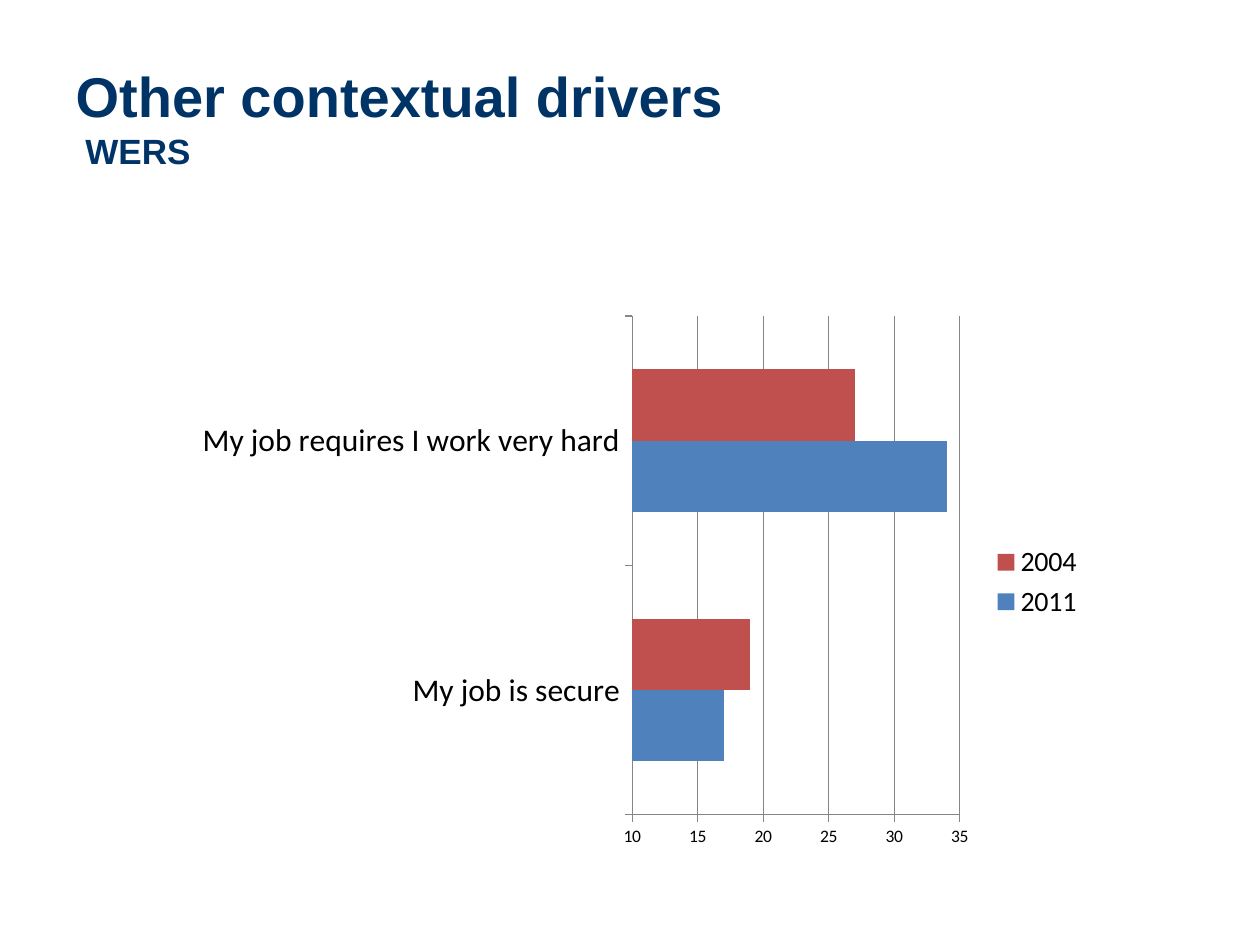
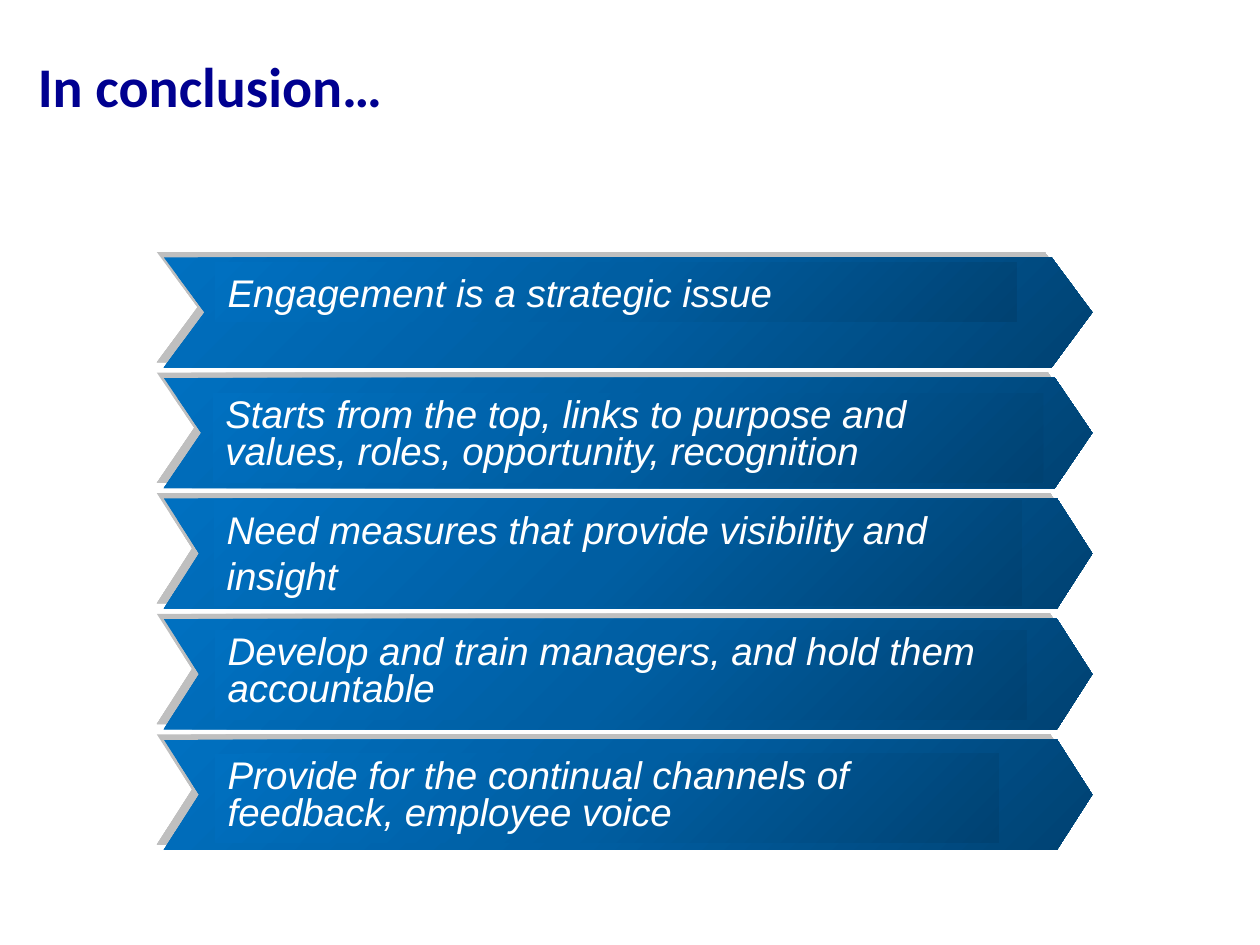
from dataclasses import dataclass
from typing import Any

from pptx import Presentation
from pptx import util as u
from pptx.chart.data import CategoryChartData
from pptx.dml.color import RGBColor
from pptx.enum import chart as ec, shapes, text
from pptx.oxml import parse_xml
from pptx.oxml.ns import nsdecls

Pt = u.Pt
NAVY, INDIGO, WHITE, BLACK, GRAY = "003366", "000090", "FFFFFF", "000000", "868686"
BLUE, RED = "4F81BD", "C0504D"
GRADIENT = ((0, "004272"), (50, "005EA2"), (100, "0070C0"))
CHEVRON_LEFT, CHEVRON_TOP, CHEVRON_W, CHEVRON_H, CHEVRON_STEP = 93.6, 147, 530.6, 63, 68.9


@dataclass
class Title:
    lines: list[tuple[str, float]]
    left: float
    top: float
    font: str
    color: str


@dataclass
class Conclusion:
    words: str
    notch: float
    left: float
    top: float
    width: float
    height: float
    spacing: float


CONCLUSIONS = [
    Conclusion("Engagement is a strategic issue", 0.37, 123, 150, 458, 33.8, 1),
    Conclusion("Starts from the top, links to purpose and values, roles, opportunity, recognition",
               0.34, 121.7, 224.6, 474.5, 51, 0.8),
    Conclusion("Need measures that provide visibility and insight",
               0.32, 122.4, 285.8, 461.5, 60.5, 1),
    Conclusion("Develop and train managers, and hold them accountable",
               0.32, 123, 360, 463.7, 51, 0.8),
    Conclusion("Provide for the continual channels of feedback, employee voice",
               0.32, 123, 430.6, 447.8, 51, 0.8),
]


def rgb(color: str) -> RGBColor:
    return RGBColor.from_string(color)


def apply(target: Any, values: dict[str, Any]) -> None:
    for name, value in values.items():
        setattr(target, name, value)


def style_font(font: Any, size: float, name: str, color: str, **extra: bool) -> None:
    apply(font, {"size": Pt(size), "name": name, **extra})
    font.color.rgb = rgb(color)


def set_title(s: Any, title: Title) -> None:
    sp = s.shapes.title
    apply(sp, {"left": Pt(title.left), "top": Pt(title.top),
               "width": Pt(648), "height": Pt(90)})
    tf = sp.text_frame
    apply(tf, {"word_wrap": True, "auto_size": text.MSO_AUTO_SIZE.NONE,
               "vertical_anchor": text.MSO_ANCHOR.MIDDLE})
    p = tf.paragraphs[0]
    p.alignment = text.PP_ALIGN.LEFT
    for i, (words, size) in enumerate(title.lines):
        if i:
            p.add_line_break()
        r = p.add_run()
        r.text = words
        style_font(r.font, size, title.font, title.color, bold=True)


def gradient_shape(s: Any, kind: Any, left: float, top: float,
                   width: float, height: float) -> Any:
    sp = s.shapes.add_shape(kind, Pt(left), Pt(top), Pt(width), Pt(height))
    stops = "".join(f'<a:gs pos="{pos * 1000}"><a:srgbClr val="{color}"/></a:gs>'
                    for pos, color in GRADIENT)
    sp._element.spPr.append(parse_xml(
        f'<a:gradFill {nsdecls("a")} rotWithShape="1"><a:gsLst>{stops}</a:gsLst>'
        '<a:path path="circle"><a:fillToRect l="100000" t="100000"/></a:path></a:gradFill>'))
    sp.line.fill.background()
    sp.shadow.inherit = False
    return sp


def add_shadow(sp: Any) -> None:
    sp._element.spPr[-1].append(parse_xml(
        f'<a:outerShdw {nsdecls("a")} dist="{Pt(5)}" dir="{217 * 60000}" rotWithShape="0">'
        '<a:srgbClr val="808080"><a:alpha val="50000"/></a:srgbClr></a:outerShdw>'))


def add_chevron(s: Any, index: int, notch: float) -> None:
    sp = gradient_shape(s, shapes.MSO_SHAPE.CHEVRON, CHEVRON_LEFT,
                        CHEVRON_TOP + index * CHEVRON_STEP, CHEVRON_W, CHEVRON_H)
    sp.adjustments[0] = notch
    add_shadow(sp)


def add_statement(s: Any, item: Conclusion) -> None:
    sp = gradient_shape(s, shapes.MSO_SHAPE.RECTANGLE,
                        item.left, item.top, item.width, item.height)
    tf = sp.text_frame
    apply(tf, {"word_wrap": True, "vertical_anchor": text.MSO_ANCHOR.TOP})
    p = tf.paragraphs[0]
    apply(p, {"alignment": text.PP_ALIGN.LEFT, "line_spacing": item.spacing})
    r = p.add_run()
    r.text = item.words
    style_font(r.font, 22, "Arial", WHITE, italic=True)


def add_survey_chart(s: Any) -> None:
    data = CategoryChartData()
    data.categories = ["My job is secure", "My job requires I work very hard"]
    data.add_series("2011", (17, 34))
    data.add_series("2004", (19, 27))
    chart = s.shapes.add_chart(ec.XL_CHART_TYPE.BAR_CLUSTERED, Pt(106.6), Pt(174.2),
                               Pt(519.8), Pt(316.8), data).chart
    apply(chart, {"has_title": False, "has_legend": True})
    style_font(chart.font, 10, "Calibri", BLACK)
    apply(chart.legend, {"position": ec.XL_LEGEND_POSITION.RIGHT, "include_in_layout": False})
    style_font(chart.legend.font, 16, "Calibri", BLACK)
    plot = chart.plots[0]
    apply(plot, {"gap_width": 150, "overlap": 0, "vary_by_categories": False})
    for series, color in zip(plot.series, (BLUE, RED)):
        series.format.fill.solid()
        series.format.fill.fore_color.rgb = rgb(color)
    apply(chart.value_axis, {"minimum_scale": 10, "maximum_scale": 35, "major_unit": 5,
                             "has_major_gridlines": True})
    lines = [chart.value_axis.major_gridlines.format.line]
    for axis, size in ((chart.category_axis, 18), (chart.value_axis, 10)):
        axis.major_tick_mark = ec.XL_TICK_MARK.OUTSIDE
        style_font(axis.tick_labels.font, size, "Calibri", BLACK)
        lines.append(axis.format.line)
    for line in lines:
        line.color.rgb = rgb(GRAY)
        line.width = Pt(0.75)
    area = chart._chartSpace.chart.plotArea
    for old in area.xpath("c:layout"):
        area.remove(old)
    bounds = {"x": 0.49, "y": 0.02, "w": 0.36, "h": 0.9}
    area.insert(0, parse_xml(
        f'<c:layout {nsdecls("c")}><c:manualLayout><c:layoutTarget val="inner"/>'
        '<c:xMode val="edge"/><c:yMode val="edge"/>'
        + "".join(f'<c:{name} val="{value}"/>' for name, value in bounds.items())
        + "</c:manualLayout></c:layout>"))


def main() -> None:
    prs = Presentation()
    apply(prs, {"slide_width": Pt(720), "slide_height": Pt(540)})
    title_only = prs.slide_layouts[5]

    s = prs.slides.add_slide(title_only)
    set_title(s, Title([("Other contextual drivers", 32), (" WERS", 20)],
                       36, 21.6, "Arial", NAVY))
    add_survey_chart(s)

    s = prs.slides.add_slide(title_only)
    set_title(s, Title([("In conclusion…", 32)], 14.4, 3.6, "Calibri", INDIGO))
    for i, item in enumerate(CONCLUSIONS):
        add_chevron(s, i, item.notch)
        add_statement(s, item)

    prs.save("out.pptx")


if __name__ == "__main__":
    main()
